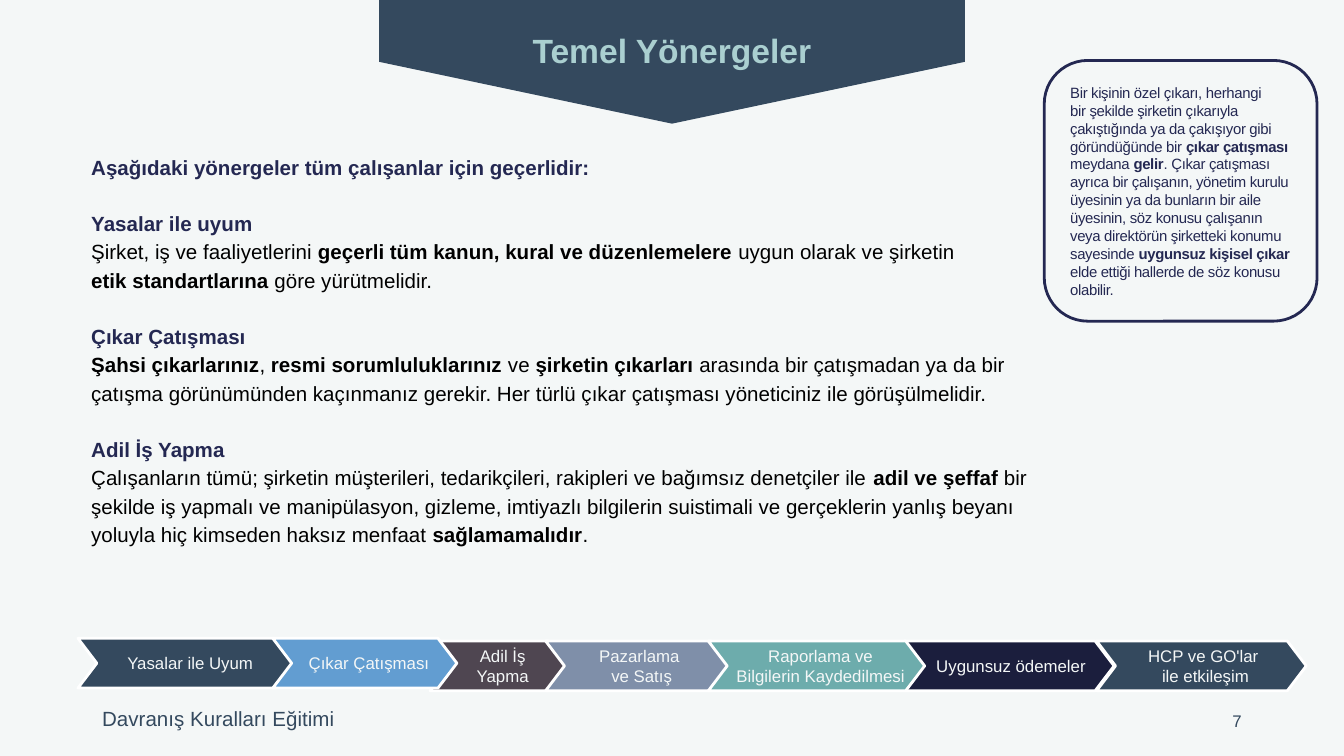
"""Build the key guidelines slide of a code of conduct training."""
from pptx import Presentation
from pptx.dml.color import RGBColor
from pptx.enum.shapes import MSO_SHAPE
from pptx.enum.text import MSO_ANCHOR, MSO_AUTO_SIZE, PP_ALIGN
from pptx.util import Inches, Pt

CHEVRON, PENTAGON, ROUNDED = MSO_SHAPE.CHEVRON, MSO_SHAPE.PENTAGON, MSO_SHAPE.ROUNDED_RECTANGLE
TOP, MIDDLE = MSO_ANCHOR.TOP, MSO_ANCHOR.MIDDLE
LEFT, CENTER, RIGHT = PP_ALIGN.LEFT, PP_ALIGN.CENTER, PP_ALIGN.RIGHT
NO_AUTOFIT = MSO_AUTO_SIZE.NONE

COLORS = {
    "background": "F4F7F7", "slate": "34495E", "mint": "AACFD0", "navy": "242852",
    "black": "000000", "white": "FFFFFF", "blue": "629DD1", "plum": "4F4651",
    "steel": "7F8FA9", "teal": "6DACAC", "midnight": "1B1E3D",
}
RGB = {name: RGBColor.from_string(value) for name, value in COLORS.items()}


def format_frame(shape, anchor, insets):
    """Set wrapping, anchor and insets, and return the text frame."""
    frame = shape.text_frame
    frame.word_wrap = True
    frame.auto_size = NO_AUTOFIT
    frame.vertical_anchor = anchor
    frame.margin_left, frame.margin_top, frame.margin_right, frame.margin_bottom = map(Inches, insets)
    return frame


def write(paragraph, text, size, color, align=LEFT, bold=None, spacing=None):
    """Fill a paragraph; asterisks enclose bold words and newlines break lines."""
    paragraph.alignment = align
    paragraph.font.name = "Arial"
    paragraph.font.size = Pt(size)
    paragraph.font.color.rgb = RGB[color]
    paragraph.font.bold = bold
    for part_index, part in enumerate(text.split("*")):
        for line_index, line in enumerate(part.split("\n")):
            if line_index:
                paragraph.add_line_break()
            if line:
                run = paragraph.add_run()
                run.text = line
                if part_index % 2:
                    run.font.bold = True
                if spacing:
                    run._r.get_or_add_rPr().set("spc", str(spacing))


presentation = Presentation()
presentation.slide_width = Inches(10)
presentation.slide_height = Inches(10) * 9 // 16
slide = presentation.slides.add_slide(presentation.slide_layouts[5])
slide.background.fill.solid()
slide.background.fill.fore_color.rgb = RGB["background"]

banner = slide.shapes.add_shape(PENTAGON, Inches(4.54), Inches(-1.72), Inches(0.92), Inches(4.36))
banner.rotation = 90
banner.adjustments[0] = 0.5
banner.shadow.inherit = False
banner.fill.solid()
banner.fill.fore_color.rgb = RGB["slate"]
banner.line.fill.background()

title = slide.shapes.title
title.left, title.top, title.width, title.height = map(Inches, (2.23, 0.18, 5.54, 0.38))
banner._element.addnext(title._element)
title_frame = format_frame(title, TOP, (0.07, 0.04, 0.07, 0.04))
write(title_frame.paragraphs[0], "Temel Yönergeler", 18, "mint", CENTER, True)

footers = [
    ("Davranış Kuralları Eğitimi", (0.69, 5.21, 2.4, 0.25), 11, TOP, LEFT),
    ("7", (7.06, 5.21, 2.25, 0.3), 9, MIDDLE, RIGHT),
]
for text, box, size, anchor, align in footers:
    footer = slide.shapes.add_textbox(*map(Inches, box))
    footer_frame = format_frame(footer, anchor, (0.07, 0.04, 0.07, 0.04))
    write(footer_frame.paragraphs[0], text, size, "slate", align)

guidelines = [
    ("Yasalar ile uyum",
     "Şirket, iş ve faaliyetlerini *geçerli tüm kanun, kural ve düzenlemelere* uygun olarak ve "
     "şirketin \n*etik standartlarına* göre yürütmelidir."),
    ("Çıkar Çatışması",
     "*Şahsi çıkarlarınız*, *resmi sorumluluklarınız* ve *şirketin çıkarları* arasında bir "
     "çatışmadan ya da bir çatışma görünümünden kaçınmanız gerekir. Her türlü çıkar çatışması "
     "yöneticiniz ile görüşülmelidir."),
    ("Adil İş Yapma",
     "Çalışanların tümü; şirketin müşterileri, tedarikçileri, rakipleri ve bağımsız denetçiler "
     "ile *adil ve şeffaf *bir şekilde iş yapmalı ve manipülasyon, gizleme, imtiyazlı bilgilerin "
     "suistimali ve gerçeklerin yanlış beyanı yoluyla hiç kimseden haksız menfaat "
     "*sağlamamalıdır*."),
]
body = slide.shapes.add_textbox(Inches(0.58), Inches(1.07), Inches(7.48), Inches(3.52))
body_frame = format_frame(body, TOP, (0.1, 0.1, 0.1, 0.1))
intro = body_frame.paragraphs[0]
intro.line_spacing = 0.9
write(intro, "Aşağıdaki yönergeler tüm çalışanlar için geçerlidir:", 11, "navy", bold=True)
for heading_text, rule_text in guidelines:
    heading = body_frame.add_paragraph()
    heading.space_before = Pt(15)
    heading.line_spacing = 1.15
    write(heading, heading_text, 11, "navy", bold=True)
    rule = body_frame.add_paragraph()
    rule.line_spacing = 1.15
    write(rule, rule_text, 11, "black")

callout = slide.shapes.add_shape(ROUNDED, Inches(7.77), Inches(0.45), Inches(2.03), Inches(1.94))
callout.shadow.inherit = False
callout.fill.background()
callout.line.color.rgb = RGB["navy"]
callout.line.width = Pt(1.5)
callout_frame = format_frame(callout, MIDDLE, (0.1, 0.1, 0.1, 0.1))
write(
    callout_frame.paragraphs[0],
    "Bir kişinin özel çıkarı, herhangi \nbir şekilde şirketin çıkarıyla çakıştığında ya da "
    "çakışıyor gibi göründüğünde bir *çıkar çatışması* meydana *gelir*. Çıkar çatışması ayrıca "
    "bir çalışanın, yönetim kurulu üyesinin ya da bunların bir aile üyesinin, söz konusu "
    "çalışanın veya direktörün şirketteki konumu sayesinde *uygunsuz kişisel çıkar* elde ettiği "
    "hallerde de söz konusu olabilir.",
    8, "navy", spacing=-20,
)

steps = [
    ("Adil İş Yapma", 3.2, 4.77, 1.02, "plum"),
    ("Uygunsuz ödemeler ", 6.73, 4.77, 1.56, "midnight"),
    ("Pazarlama \nve Satış", 4.06, 4.77, 1.37, "steel"),
    ("Raporlama ve Bilgilerin Kaydedilmesi", 5.27, 4.77, 1.61, "teal"),
    ("Yasalar ile Uyum", 0.58, 4.75, 1.61, "slate"),
    ("Çıkar Çatışması", 2.03, 4.75, 1.37, "blue"),
    ("HCP ve GO'lar \nile etkileşim", 8.16, 4.77, 1.56, "slate"),
]
for text, left, top, width, color in steps:
    step = slide.shapes.add_shape(CHEVRON, Inches(left), Inches(top), Inches(width), Inches(0.37))
    step.adjustments[0] = 0.38
    step.shadow.inherit = False
    step.fill.solid()
    step.fill.fore_color.rgb = RGB[color]
    step.line.color.rgb = RGB["white"]
    step.line.width = Pt(1.5)
    step_frame = format_frame(step, MIDDLE, (0.06, 0, 0, 0))
    write(step_frame.paragraphs[0], text, 9, "background", CENTER)

presentation.save("out.pptx")
